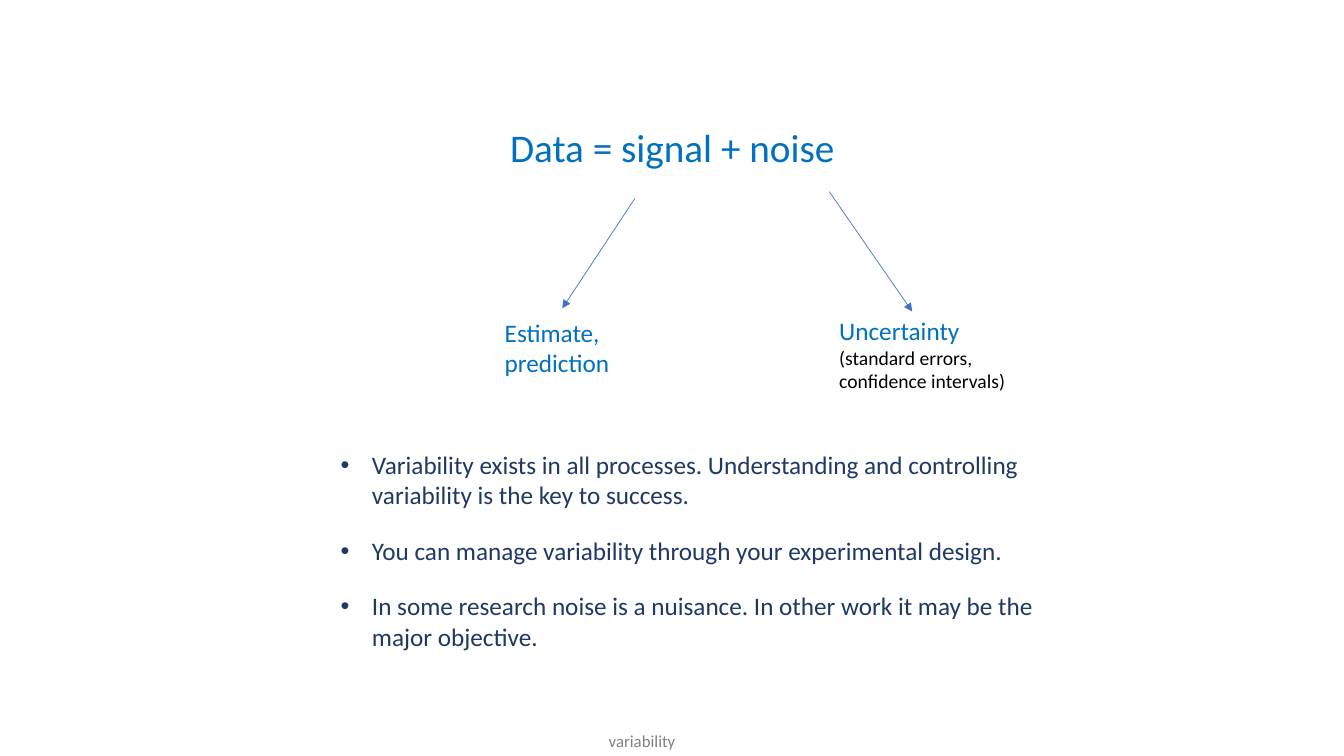
"""Build a slide that splits data into signal and noise."""
from dataclasses import dataclass

import lxml.etree
import pptx
import pptx.dml.color
import pptx.enum.shapes
import pptx.enum.text
import pptx.oxml.ns
import pptx.presentation
import pptx.shapes.autoshape
import pptx.slide
import pptx.util

Cm = pptx.util.Cm
qn = pptx.oxml.ns.qn
Align = pptx.enum.text.PP_ALIGN


@dataclass(frozen=True)
class Theme:
    font: str = "Calibri"
    blue: str = "0070C0"
    navy: str = "203864"
    grey: str = "808080"
    black: str = "000000"
    arrow: str = "4472C4"
    title_size: float = 28
    text_size: float = 18
    detail_size: float = 14
    footer_size: float = 12
    bullet_gap: float = 18
    arrow_width: float = 0.5
    bullet_indent: float = 0.79


THEME = Theme()


@dataclass(frozen=True)
class Line:
    text: str
    size: float
    color: str


@dataclass(frozen=True)
class Block:
    left: float
    top: float
    width: float
    height: float
    lines: tuple[Line, ...]
    align: Align = Align.LEFT
    bulleted: bool = False


@dataclass(frozen=True)
class Arrow:
    start: tuple[float, float]
    end: tuple[float, float]


EQUATION = Block(7.49, 2.97, 18.9, 1.45,
                 (Line("Data = signal + noise", THEME.title_size, THEME.blue),), Align.CENTER)

LESSONS = Block(8.33, 11.2, 18.69, 5.38, tuple(
    Line(lesson, THEME.text_size, THEME.navy) for lesson in (
        "Variability exists in all processes. Understanding and controlling "
        "variability is the key to success.",
        "You can manage variability through your experimental design.",
        "In some research noise is a nuisance. In other work it may be the major objective.",
    )), bulleted=True)

LABELS = (
    Block(15.09, 18.29, 5.18, 0.76, (Line("variability", THEME.footer_size, THEME.grey),)),
    Block(12.47, 7.87, 3.53, 1.8, (
        Line("Estimate,", THEME.text_size, THEME.blue),
        Line("prediction", THEME.text_size, THEME.blue))),
    Block(20.9, 7.82, 5.46, 2.24, (
        Line("Uncertainty", THEME.text_size, THEME.blue),
        Line("(standard errors, confidence intervals)", THEME.detail_size, THEME.black))),
)

ARROWS = (
    Arrow((16, 5), (14.17, 7.77)),
    Arrow((20.9, 4.83), (22.99, 7.85)),
)


def fill_block(shape: pptx.shapes.autoshape.Shape, block: Block) -> None:
    """Place a text shape and write its paragraphs."""
    shape.left, shape.top = Cm(block.left), Cm(block.top)
    shape.width, shape.height = Cm(block.width), Cm(block.height)
    frame = shape.text_frame
    frame.word_wrap = True
    frame.auto_size = pptx.enum.text.MSO_AUTO_SIZE.SHAPE_TO_FIT_TEXT
    frame.vertical_anchor = pptx.enum.text.MSO_ANCHOR.TOP
    for index, line in enumerate(block.lines):
        paragraph = frame.add_paragraph() if index else frame.paragraphs[0]
        paragraph.alignment = block.align
        paragraph.line_spacing = 1.0
        paragraph.space_before = pptx.util.Pt(THEME.bullet_gap if block.bulleted else 0)
        run = paragraph.add_run()
        run.text = line.text
        run.font.name = THEME.font
        run.font.size = pptx.util.Pt(line.size)
        run.font.color.rgb = pptx.dml.color.RGBColor.from_string(line.color)
        if block.bulleted:
            properties = paragraph._p.get_or_add_pPr()
            indent = Cm(THEME.bullet_indent)
            properties.set("marL", str(indent))
            properties.set("indent", str(-indent))
            lxml.etree.SubElement(properties, qn("a:buFont")).set("typeface", "Arial")
            lxml.etree.SubElement(properties, qn("a:buChar")).set("char", "•")


def draw_arrow(slide: pptx.slide.Slide, arrow: Arrow) -> None:
    """Draw a thin line with a triangular head at its end."""
    connector = slide.shapes.add_connector(
        pptx.enum.shapes.MSO_CONNECTOR.STRAIGHT,
        *(Cm(value) for value in arrow.start + arrow.end))
    connector.line.width = pptx.util.Pt(THEME.arrow_width)
    connector.line.color.rgb = pptx.dml.color.RGBColor.from_string(THEME.arrow)
    outline = connector.line._get_or_add_ln()
    lxml.etree.SubElement(outline, qn("a:tailEnd")).set("type", "triangle")
    lxml.etree.SubElement(connector._element.spPr, qn("a:effectLst"))


def build() -> pptx.presentation.Presentation:
    """Return the presentation with its single slide."""
    deck = pptx.Presentation()
    deck.slide_width, deck.slide_height = Cm(33.87), Cm(19.05)
    slide = deck.slides.add_slide(deck.slide_layouts[1])
    fill_block(slide.shapes.title, EQUATION)
    fill_block(slide.placeholders[1], LESSONS)
    for arrow in ARROWS:
        draw_arrow(slide, arrow)
    for label in LABELS:
        fill_block(slide.shapes.add_textbox(0, 0, 0, 0), label)
    return deck


def main() -> None:
    """Save the finished presentation."""
    build().save("out.pptx")


if __name__ == "__main__":
    main()
